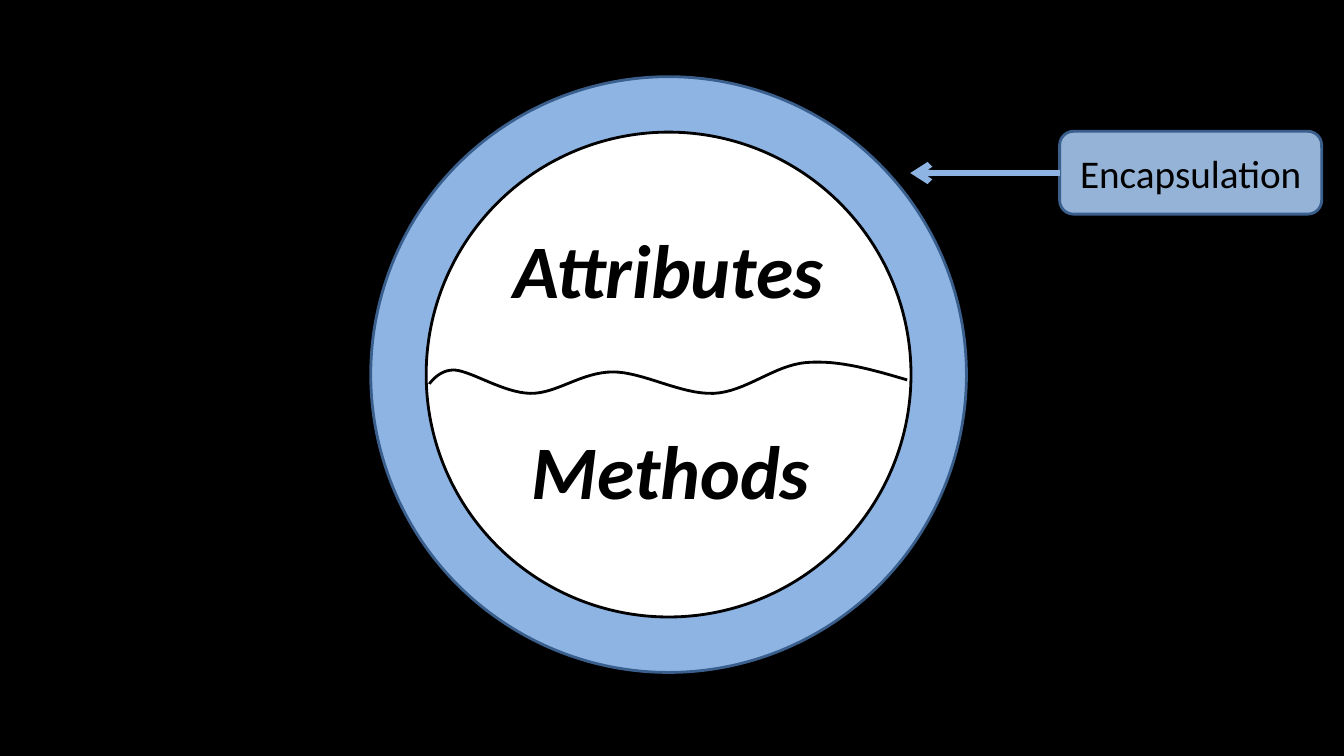
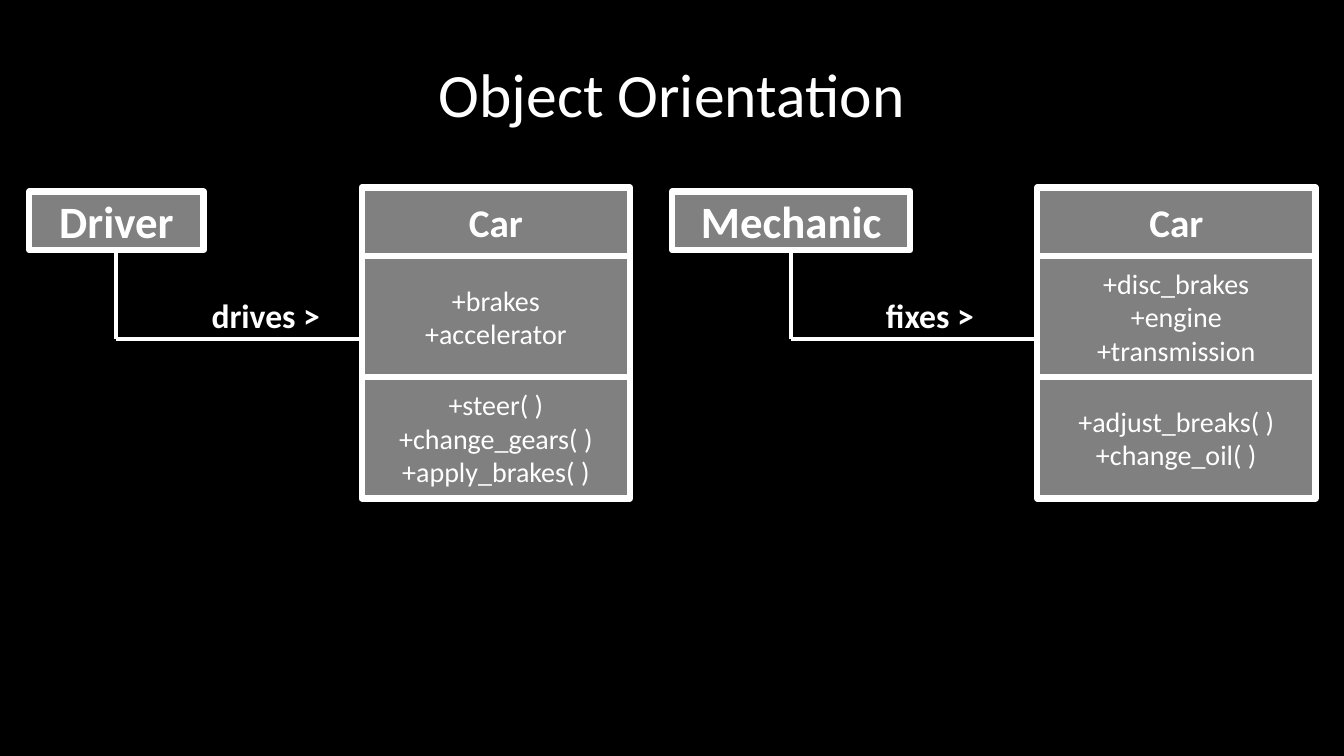
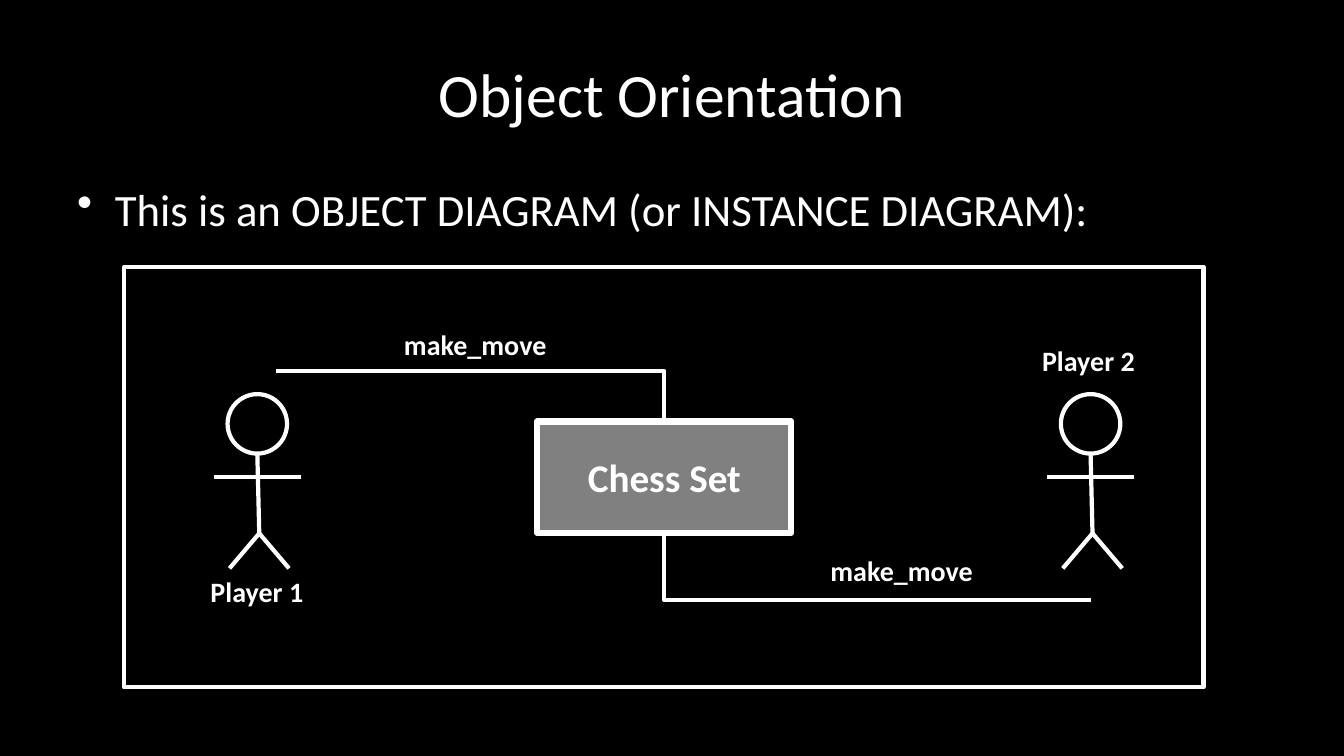
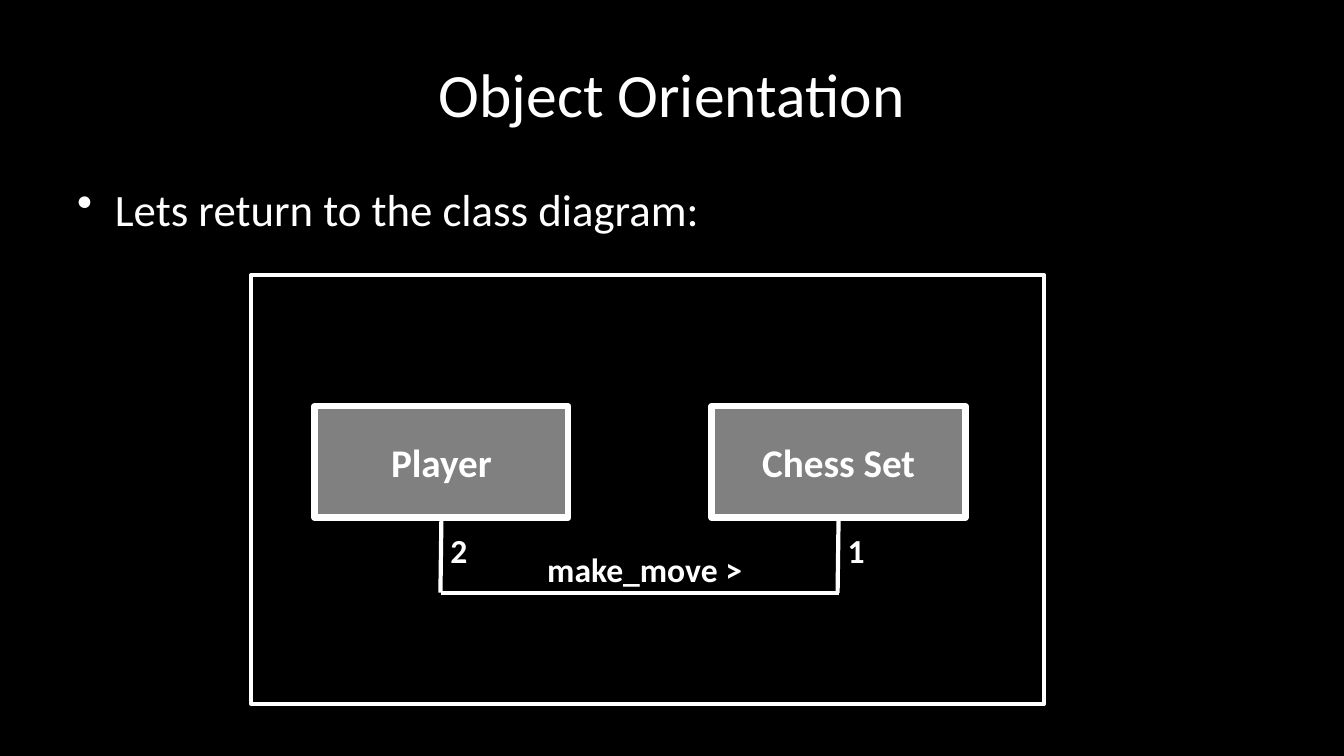
import dataclasses
import typing

import pptx
import pptx.dml.color
import pptx.enum.shapes
import pptx.enum.text
import pptx.oxml.ns
import pptx.oxml.xmlchemy
import pptx.slide
import pptx.util

FONT = "Calibri"
BLACK = "000000"
WHITE = "FFFFFF"
GRAY = "808080"
SKY = "8EB4E3"
MIST = "95B3D7"
NAVY = "3A5F8C"

Pt = pptx.util.Pt
KIND = pptx.enum.shapes.MSO_SHAPE
JOIN = pptx.enum.shapes.MSO_CONNECTOR
ALIGN = pptx.enum.text.PP_ALIGN
ANCHOR = pptx.enum.text.MSO_ANCHOR
qn = pptx.oxml.ns.qn
node = pptx.oxml.xmlchemy.OxmlElement


class Spot(typing.NamedTuple):
    x: float
    y: float


class Area(typing.NamedTuple):
    left: float
    top: float
    width: float
    height: float


@dataclasses.dataclass(frozen=True)
class Type:
    size: float
    bold: bool = False
    slant: bool = False
    tone: str = WHITE


@dataclasses.dataclass(frozen=True)
class Look:
    fill: str | None
    edge: str
    weight: float


@dataclasses.dataclass(frozen=True)
class Model:
    actor: str
    actor_area: Area
    stem: float
    verb: str
    verb_area: Area
    left: float
    width: float
    traits: str
    actions: str


CARD = Look(GRAY, WHITE, 4.5)
HOLLOW = Look(None, WHITE, 3)
HEAD = Type(28, bold=True)
LABEL = Type(24, bold=True)
SMALL = Type(20, bold=True)
PLAIN = Type(20)
GRAND = Type(54, bold=True, slant=True, tone=BLACK)

TITLE = Area(48, 21.6, 864, 90)
BODY = Area(48, 126, 864, 356.4)

WAVE = [
    Spot(648, 271.4),
    Spot(623.5, 264.2), Spot(599, 257), Spot(576, 259),
    Spot(553, 260.8), Spot(532.8, 280), Spot(509.8, 281),
    Spot(486.7, 282), Spot(459.4, 265.7), Spot(437.8, 265.7),
    Spot(415.4, 265.7), Spot(397.4, 281.5), Spot(378.7, 281),
    Spot(360, 280.6), Spot(337.7, 265.7), Spot(325.4, 264.4),
    Spot(313.9, 263.4), Spot(306.7, 274.3), Spot(306.7, 274.3),
]

MODELS = [
    Model("Driver", Area(20.9, 136.8, 124.6, 41.8), 82.8,
          "drives >", Area(144, 207.4, 92.9, 36.4), 258.5, 191.5,
          "+brakes\n+accelerator",
          "+steer( )\n+change_gears( )\n+apply_brakes( )"),
    Model("Mechanic", Area(480.2, 136.8, 170, 41.8), 565.2,
          "fixes >", Area(625.7, 207.4, 78.5, 36.4), 740.9, 198.7,
          "+disc_brakes\n+engine\n+transmission",
          "+adjust_breaks( )\n+change_oil( )"),
]


def tint(code: str) -> pptx.dml.color.RGBColor:
    return pptx.dml.color.RGBColor.from_string(code)


def write(frame, text: str, style: Type, align=ALIGN.CENTER) -> None:
    frame.text = text
    for para in frame.paragraphs:
        para.alignment = align
        for run in para.runs:
            font = run.font
            font.name = FONT
            font.size = Pt(style.size)
            font.bold = style.bold
            font.italic = style.slant
            font.color.rgb = tint(style.tone)


def ink(item, tone: str, weight: float) -> None:
    item.line.color.rgb = tint(tone)
    item.line.width = Pt(weight)


def draw(slide: pptx.slide.Slide, kind, area: Area, look: Look,
         text: str = "", style: Type = HEAD) -> None:
    shape = slide.shapes.add_shape(kind, *map(Pt, area))
    shape.shadow.inherit = False
    if look.fill:
        shape.fill.solid()
        shape.fill.fore_color.rgb = tint(look.fill)
    else:
        shape.fill.background()
    ink(shape, look.edge, look.weight)
    if text:
        shape.text_frame.vertical_anchor = ANCHOR.MIDDLE
        write(shape.text_frame, text, style)


def note(slide: pptx.slide.Slide, area: Area, text: str, style: Type,
         align=ALIGN.LEFT) -> None:
    frame = slide.shapes.add_textbox(*map(Pt, area)).text_frame
    frame.word_wrap = False
    frame.auto_size = pptx.enum.text.MSO_AUTO_SIZE.SHAPE_TO_FIT_TEXT
    write(frame, text, style, align)


def link(slide: pptx.slide.Slide, start: Spot, end: Spot, tone: str = WHITE,
         weight: float = 3, kind=JOIN.STRAIGHT, arrow: bool = False):
    line = slide.shapes.add_connector(kind, *map(Pt, (*start, *end)))
    ink(line, tone, weight)
    props = line._element.spPr
    if arrow:
        tip = node("a:tailEnd")
        tip.set("type", "arrow")
        props.find(qn("a:ln")).append(tip)
    props.append(node("a:effectLst"))
    return line


def bend(slide: pptx.slide.Slide, start: Spot, end: Spot,
         turned: bool = False) -> None:
    line = link(slide, start, end, kind=JOIN.ELBOW)
    props = line._element.spPr
    props.find(qn("a:prstGeom")).set("prst", "bentConnector2")
    if turned:
        props.find(qn("a:xfrm")).set("rot", "10800000")


def curve(slide: pptx.slide.Slide, spots: list[Spot], steps: int = 16) -> None:
    trail = []
    for i in range(0, len(spots) - 1, 3):
        a, b, c, d = spots[i:i + 4]
        for step in range(1, steps + 1):
            t = step / steps
            u = 1 - t
            trail.append(tuple(
                Pt(u**3 * p + 3 * u * u * t * q + 3 * u * t * t * r + t**3 * s)
                for p, q, r, s in zip(a, b, c, d)))
    maker = slide.shapes.build_freeform(*map(Pt, spots[0]))
    maker.add_line_segments(trail, close=False)
    shape = maker.convert_to_shape()
    shape.shadow.inherit = False
    shape.fill.background()
    ink(shape, BLACK, 2)


def start(deck, title: str = "", point: str = "") -> pptx.slide.Slide:
    slide = deck.slides.add_slide(deck.slide_layouts[6])
    if title:
        frame = slide.shapes.add_textbox(*map(Pt, TITLE)).text_frame
        frame.word_wrap = True
        frame.vertical_anchor = ANCHOR.MIDDLE
        write(frame, title, Type(44))
    if point:
        frame = slide.shapes.add_textbox(*map(Pt, BODY)).text_frame
        frame.word_wrap = True
        write(frame, point, Type(32), ALIGN.LEFT)
        props = frame.paragraphs[0]._p.get_or_add_pPr()
        props.set("marL", str(Pt(27)))
        props.set("indent", str(-Pt(27)))
        mark = node("a:buChar")
        mark.set("char", "•")
        props.append(mark)
    return slide


def class_tree(slide: pptx.slide.Slide, model: Model) -> None:
    top, head, cell, level = 133.9, 49, 86.6, 241.9
    area = model.actor_area
    draw(slide, KIND.RECTANGLE, area, CARD, model.actor, Type(32, bold=True))
    corner = Spot(model.stem, level)
    link(slide, Spot(model.left, level), corner)
    link(slide, Spot(model.stem, area.top + area.height), corner)
    note(slide, model.verb_area, model.verb, LABEL)
    rows = [("Car", head, HEAD), (model.traits, cell, PLAIN),
            (model.actions, cell, PLAIN)]
    for text, height, style in rows:
        draw(slide, KIND.RECTANGLE, Area(model.left, top, model.width, height),
             CARD, text, style)
        top += height


def person(slide: pptx.slide.Slide, x: float) -> None:
    draw(slide, KIND.OVAL, Area(x - 21.25, 281.5, 42.5, 42.5), HOLLOW)
    hip = Spot(x + 1.4, 381)
    link(slide, Spot(x, 324), hip)
    for side in (1, -1):
        link(slide, hip, Spot(hip.x + side * 21.25, 406))
    link(slide, Spot(x + 30.9, 340.6), Spot(x - 30.9, 340.6))


def capsule(deck) -> None:
    slide = start(deck)
    for gap, look in ((0, Look(SKY, NAVY, 2)), (39.6, Look(WHITE, BLACK, 2))):
        size = 425.5 - 2 * gap
        draw(slide, KIND.OVAL, Area(264.8 + gap, 54.8 + gap, size, size), look)
    note(slide, Area(357.1, 155.5, 240.5, 72.7), "Attributes", GRAND, ALIGN.CENTER)
    note(slide, Area(371.5, 299.5, 215.3, 72.7), "Methods", GRAND, ALIGN.CENTER)
    curve(slide, WAVE)
    draw(slide, KIND.ROUNDED_RECTANGLE, Area(756.9, 93.8, 187.2, 59.2),
         Look(MIST, NAVY, 2), "Encapsulation", Type(28, tone=BLACK))
    link(slide, Spot(756.9, 123.6), Spot(650.2, 123.6), SKY, 4.5, arrow=True)


def classes(deck) -> None:
    slide = start(deck, "Object Orientation")
    for model in MODELS:
        class_tree(slide, model)


def objects(deck) -> None:
    slide = start(deck, "Object Orientation",
                  "This is an OBJECT DIAGRAM (or INSTANCE DIAGRAM):")
    draw(slide, KIND.RECTANGLE, Area(88.6, 190.8, 771.1, 300.2), HOLLOW)
    draw(slide, KIND.RECTANGLE, Area(383.8, 301, 181.4, 79.6), CARD, "Chess Set")
    for x in (183.8, 779):
        person(slide, x)
    bend(slide, Spot(474.5, 380.6), Spot(779, 428.6), turned=True)
    bend(slide, Spot(197.3, 265), Spot(474.5, 301))
    for text, left, top, width in (
            ("Player 1", 143.3, 406.8, 81.4),
            ("Player 2", 737.3, 241.9, 81.4),
            ("make_move", 281.5, 230.4, 117.4),
            ("make_move", 586.1, 391.7, 117.4)):
        note(slide, Area(left, top, width, 31.5), text, SMALL)


def chess(deck) -> None:
    slide = start(deck, "Object Orientation", "Lets return to the class diagram:")
    draw(slide, KIND.RECTANGLE, Area(179.3, 196.6, 566.6, 306), HOLLOW)
    base = 423.4
    for name, count, left in (("Player", "2", 224.6), ("Chess Set", "1", 508.3)):
        draw(slide, KIND.RECTANGLE, Area(left, 290.2, 181.4, 79.6), CARD, name)
        x = left + 90.7
        link(slide, Spot(x, 369.8), Spot(x - 0.7, base))
        note(slide, Area(x - 0.7, 375.1, 26.6, 36.4), count, LABEL)
    link(slide, Spot(599, base), Spot(315.3, base))
    note(slide, Area(383.8, 388.8, 155.5, 36.4), "make_move >", LABEL)


def main() -> None:
    deck = pptx.Presentation()
    deck.slide_width = Pt(960)
    deck.slide_height = Pt(540)
    back = deck.slide_master.background.fill
    back.solid()
    back.fore_color.rgb = tint(BLACK)
    for build in (capsule, classes, objects, chess):
        build(deck)
    deck.save("out.pptx")


if __name__ == "__main__":
    main()
